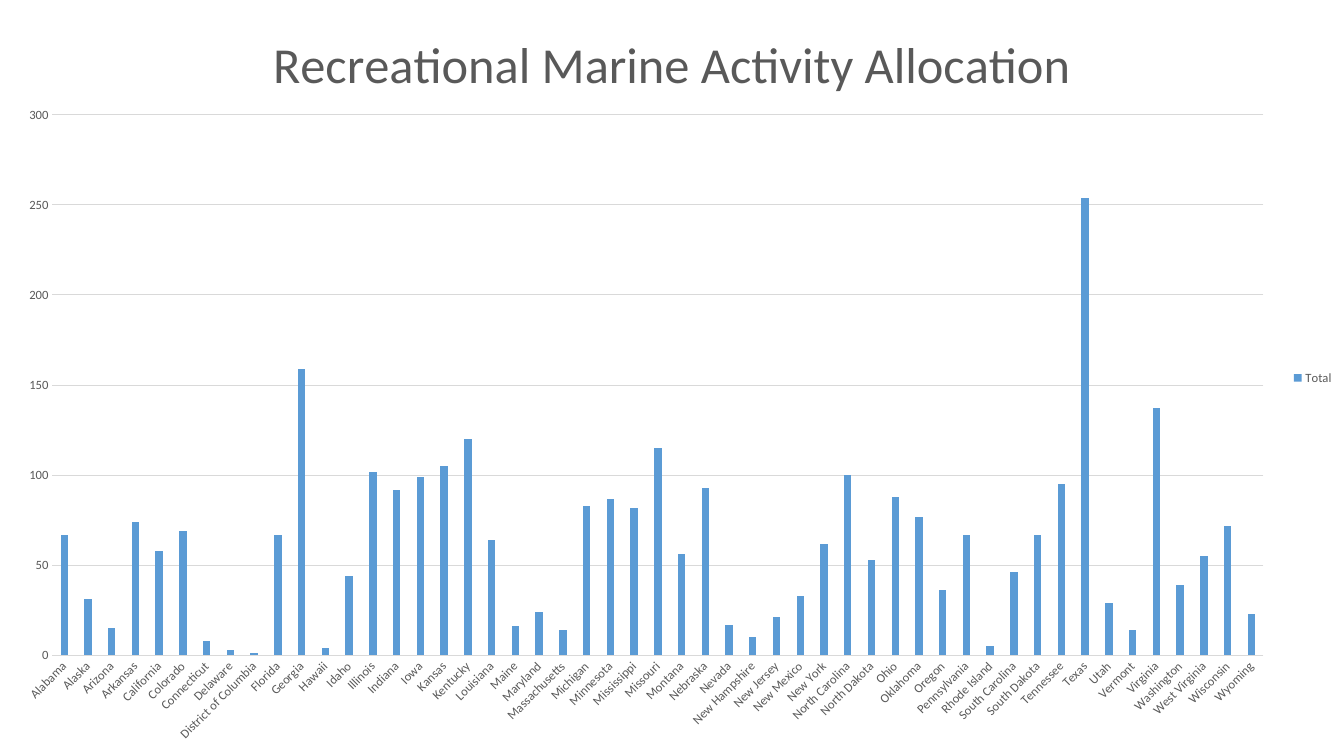
import pptx
import pptx.chart.data
import pptx.dml.color
import pptx.enum.chart
import pptx.oxml
import pptx.oxml.ns
import pptx.util
from pptx.util import Inches, Pt

COLORS = {"bar": "5B9BD5", "text": "595959", "line": "D9D9D9"}
FONT = "Calibri"
TITLE = "Recreational Marine Activity Allocation"
PLOT_LAYOUT = {"x": 0.039, "y": 0.152, "w": 0.901, "h": 0.715}

ALLOCATION = {
    "Alabama": 67, "Alaska": 31, "Arizona": 15, "Arkansas": 74, "California": 58,
    "Colorado": 69, "Connecticut": 8, "Delaware": 3, "District of Columbia": 1,
    "Florida": 67, "Georgia": 159, "Hawaii": 4, "Idaho": 44, "Illinois": 102,
    "Indiana": 92, "Iowa": 99, "Kansas": 105, "Kentucky": 120, "Louisiana": 64,
    "Maine": 16, "Maryland": 24, "Massachusetts": 14, "Michigan": 83,
    "Minnesota": 87, "Mississippi": 82, "Missouri": 115, "Montana": 56,
    "Nebraska": 93, "Nevada": 17, "New Hampshire": 10, "New Jersey": 21,
    "New Mexico": 33, "New York": 62, "North Carolina": 100, "North Dakota": 53,
    "Ohio": 88, "Oklahoma": 77, "Oregon": 36, "Pennsylvania": 67,
    "Rhode Island": 5, "South Carolina": 46, "South Dakota": 67,
    "Tennessee": 95, "Texas": 254, "Utah": 29, "Vermont": 14, "Virginia": 137,
    "Washington": 39, "West Virginia": 55, "Wisconsin": 72, "Wyoming": 23,
}


def rgb(name):
    return pptx.dml.color.RGBColor.from_string(COLORS[name])


def style_font(font, size):
    font.name = FONT
    font.size = Pt(size)
    font.bold = False
    font.color.rgb = rgb("text")


def style_line(line):
    line.color.rgb = rgb("line")
    line.width = Pt(0.75)


def add_title(chart):
    tf = chart.chart_title.text_frame
    tf.text = TITLE
    style_font(tf.paragraphs[0].font, 36)
    chart.chart_title.include_in_layout = False


def add_legend(chart):
    chart.has_legend = True
    chart.legend.position = pptx.enum.chart.XL_LEGEND_POSITION.RIGHT
    chart.legend.include_in_layout = False
    style_font(chart.legend.font, 9)


def style_axes(chart):
    cat, val = chart.category_axis, chart.value_axis
    for axis in (cat, val):
        axis.major_tick_mark = pptx.enum.chart.XL_TICK_MARK.NONE
        axis.minor_tick_mark = pptx.enum.chart.XL_TICK_MARK.NONE
        style_font(axis.tick_labels.font, 9)
    style_line(cat.format.line)
    val.format.line.fill.background()
    style_line(val.major_gridlines.format.line)
    val.minimum_scale, val.maximum_scale, val.major_unit = 0, 300, 50


def rotate_category_labels(chart):
    body = chart.category_axis._element.find(
        "/".join(pptx.oxml.ns.qn(tag) for tag in ("c:txPr", "a:bodyPr")))
    body.set("rot", "-2700000")
    body.set("vert", "horz")


def place_plot(chart):
    area = chart._chartSpace.chart.plotArea
    for old in area.findall(pptx.oxml.ns.qn("c:layout")):
        area.remove(old)
    modes = '<c:xMode val="edge"/><c:yMode val="edge"/>'
    sizes = "".join(f'<c:{key} val="{v}"/>' for key, v in PLOT_LAYOUT.items())
    area.insert(0, pptx.oxml.parse_xml(
        f'<c:layout {pptx.oxml.ns.nsdecls("c")}><c:manualLayout>'
        f'<c:layoutTarget val="inner"/>{modes}{sizes}'
        '</c:manualLayout></c:layout>'))


def add_column_chart(s, width, height):
    data = pptx.chart.data.CategoryChartData()
    data.categories = list(ALLOCATION)
    data.add_series("Total", list(ALLOCATION.values()))
    chart = s.shapes.add_chart(
        pptx.enum.chart.XL_CHART_TYPE.COLUMN_CLUSTERED,
        Inches(0), Inches(0), width, height, data).chart
    chart.font.name = FONT
    chart.font.size = Pt(10)
    plot = chart.plots[0]
    plot.gap_width = 219
    plot.overlap = -27
    plot.vary_by_categories = False
    fill = plot.series[0].format.fill
    fill.solid()
    fill.fore_color.rgb = rgb("bar")
    return chart


def main():
    prs = pptx.Presentation()
    prs.slide_width, prs.slide_height = Inches(13.33), Inches(7.5)
    s = prs.slides.add_slide(prs.slide_layouts[6])
    chart = add_column_chart(s, prs.slide_width, prs.slide_height)
    add_title(chart)
    add_legend(chart)
    style_axes(chart)
    rotate_category_labels(chart)
    place_plot(chart)
    prs.save("out.pptx")


if __name__ == "__main__":
    main()
